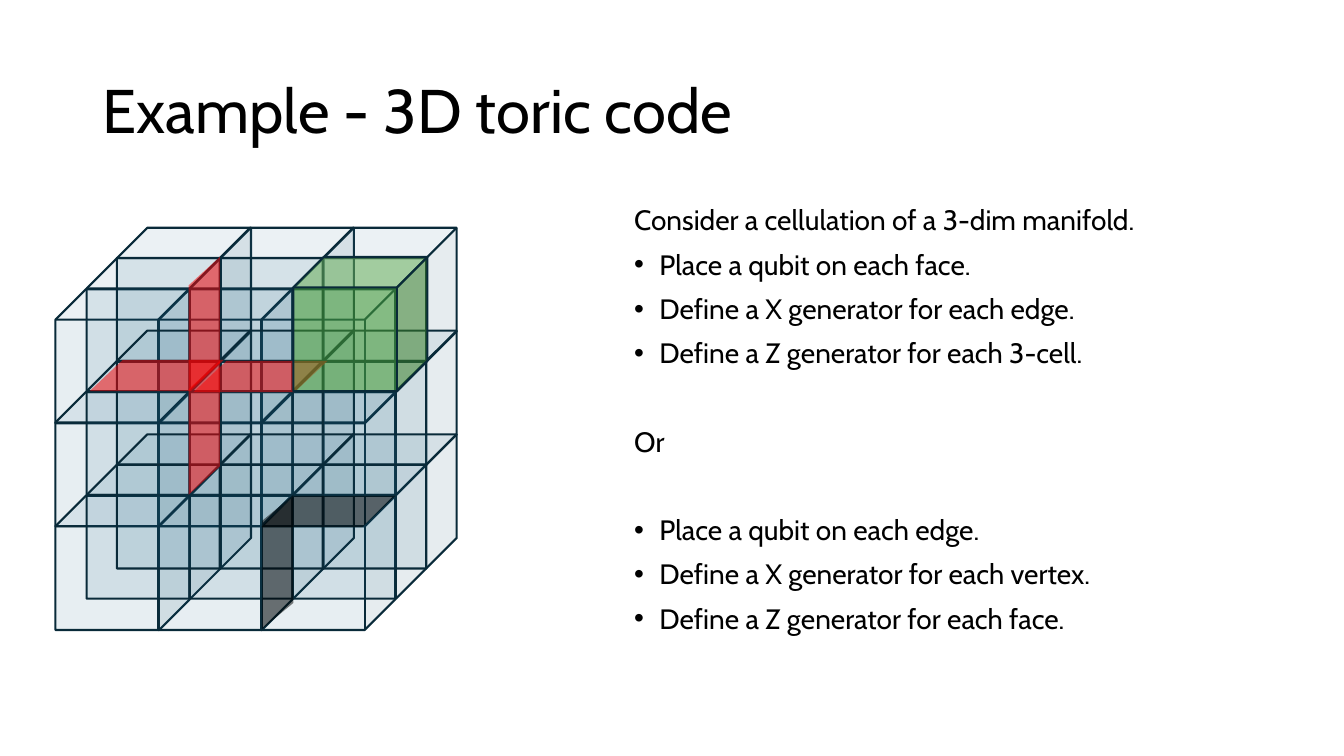
from dataclasses import dataclass
from itertools import product

from lxml import etree
from pptx import Presentation
from pptx.dml.color import RGBColor
from pptx.enum.shapes import MSO_SHAPE
from pptx.enum.text import MSO_ANCHOR, MSO_AUTO_SIZE, PP_ALIGN
from pptx.oxml.ns import qn
from pptx.util import Emu, Pt

CUBE, PARALLELOGRAM = MSO_SHAPE.CUBE, MSO_SHAPE.PARALLELOGRAM
LEFT, TOP, MIDDLE = PP_ALIGN.LEFT, MSO_ANCHOR.TOP, MSO_ANCHOR.MIDDLE
NO_FIT = MSO_AUTO_SIZE.NONE
PX = 9144  # 100 px to the inch


@dataclass(frozen=True)
class Theme:
    font: str = "Cabin"
    text: str = "000000"
    cell: str = "156082"
    edge: str = "092A39"
    x_face: str = "FF0000"
    z_face: str = "000000"
    z_cell: str = "4EA72E"
    title_size: int = 44
    body_size: int = 20
    line_width: float = 1.5


def set_all(target, values):
    for name, value in values.items():
        setattr(target, name, value)


class SlideBuilder:
    def __init__(self, slide, theme):
        self.slide = slide
        self.theme = theme

    def place(self, box, left, top, width, height):
        frame = {"left": left, "top": top, "width": width, "height": height}
        set_all(box, {name: Emu(value * PX) for name, value in frame.items()})

    def text(self, box, area, lines, size, anchor):
        """Fill a placeholder with (text, bulleted, space before) lines."""
        self.place(box, *area)
        frame = box.text_frame
        set_all(frame, {"word_wrap": True, "auto_size": NO_FIT,
                        "vertical_anchor": anchor})
        for index, (words, bulleted, space) in enumerate(lines):
            para = frame.add_paragraph() if index else frame.paragraphs[0]
            set_all(para, {"alignment": LEFT, "line_spacing": 0.9,
                           "space_before": Pt(space), "space_after": Pt(0)})
            self.bullet(para, bulleted)
            span = para.add_run()
            span.text = words
            set_all(span.font, {"name": self.theme.font, "size": Pt(size)})
            span.font.color.rgb = RGBColor.from_string(self.theme.text)

    def bullet(self, para, bulleted):
        props = para._p.get_or_add_pPr()
        indent = 25 * PX if bulleted else 0
        props.set("marL", str(indent))
        props.set("indent", str(-indent))
        if bulleted:
            etree.SubElement(props, qn("a:buFont")).set("typeface", "Arial")
            etree.SubElement(props, qn("a:buChar")).set("char", "•")
        else:
            etree.SubElement(props, qn("a:buNone"))

    def solid(self, parent, kind, area, adjust, color, opacity):
        shape = parent.shapes.add_shape(kind, 0, 0, 0, 0)
        self.place(shape, *area)
        shape.adjustments[0] = adjust
        shape.shadow.inherit = False
        shape.fill.solid()
        shape.fill.fore_color.rgb = RGBColor.from_string(color)
        tint = shape._element.spPr.find(".//" + qn("a:srgbClr"))
        etree.SubElement(tint, qn("a:alpha")).set("val", str(opacity * 1000))
        return shape

    def cube(self, parent, left, top, color, opacity):
        shape = self.solid(parent, CUBE, (left, top, 133, 133), 0.227,
                           color, opacity)
        shape.line.color.rgb = RGBColor.from_string(self.theme.edge)
        shape.line.width = Pt(self.theme.line_width)

    def face(self, parent, left, top, adjust, color, upright):
        shape = self.solid(parent, PARALLELOGRAM, (left, top, 133, 31),
                           adjust, color, 50)
        shape.line.fill.background()
        if upright:
            shape.rotation = 270
            shape._element.spPr.find(qn("a:xfrm")).set("flipV", "1")

    def group(self):
        return self.slide.shapes.add_group_shape()


BODY_LINES = [
    ("Consider a cellulation of a 3-dim manifold.", False, 10),
    ("Place a qubit on each face.", True, 10),
    ("Define a X generator for each edge.", True, 10),
    ("Define a Z generator for each 3-cell.", True, 10),
    ("Or", False, 41.6),
    ("Place a qubit on each edge.", True, 41.6),
    ("Define a X generator for each vertex.", True, 10),
    ("Define a Z generator for each face.", True, 10),
]

# Lattice, from the front layer to the back
DEPTHS = (0, 31, 61)
ROWS = (287, 389, 492)
COLUMNS = (55, 157, 259)

# Marked faces: left, top, slant, upright
Z_FACES = [(259, 492, 1.058, False), (209, 542, 0.833, True)]
X_FACES = [(89, 357, 1.058, False), (192, 358, 1.058, False),
           (136, 306, 0.909, True), (136, 409, 0.909, True)]


def main():
    deck = Presentation()
    set_all(deck, {"slide_width": Emu(1333 * PX),
                   "slide_height": Emu(750 * PX)})
    page = deck.slides.add_slide(deck.slide_layouts[1])
    theme = Theme()
    builder = SlideBuilder(page, theme)

    # Title and list
    title, body = page.placeholders
    builder.text(title, (92, 40, 1150, 145),
                 [("Example - 3D toric code", False, 0)],
                 theme.title_size, MIDDLE)
    builder.text(body, (619, 200, 623, 476), BODY_LINES,
                 theme.body_size, TOP)

    # Lattice of cells
    lattice = builder.group()
    for depth, row, column in product(DEPTHS, ROWS, COLUMNS):
        builder.cube(lattice, column + depth, row - depth, theme.cell, 10)

    # Faces around one edge of each kind
    for left, top, slant, upright in Z_FACES:
        builder.face(page, left, top, slant, theme.z_face, upright)
    cross = builder.group()
    for left, top, slant, upright in X_FACES:
        builder.face(cross, left, top, slant, theme.x_face, upright)

    # Marked 3-cell
    builder.cube(page, 291, 255, theme.z_cell, 50)

    deck.save("out.pptx")


if __name__ == "__main__":
    main()
